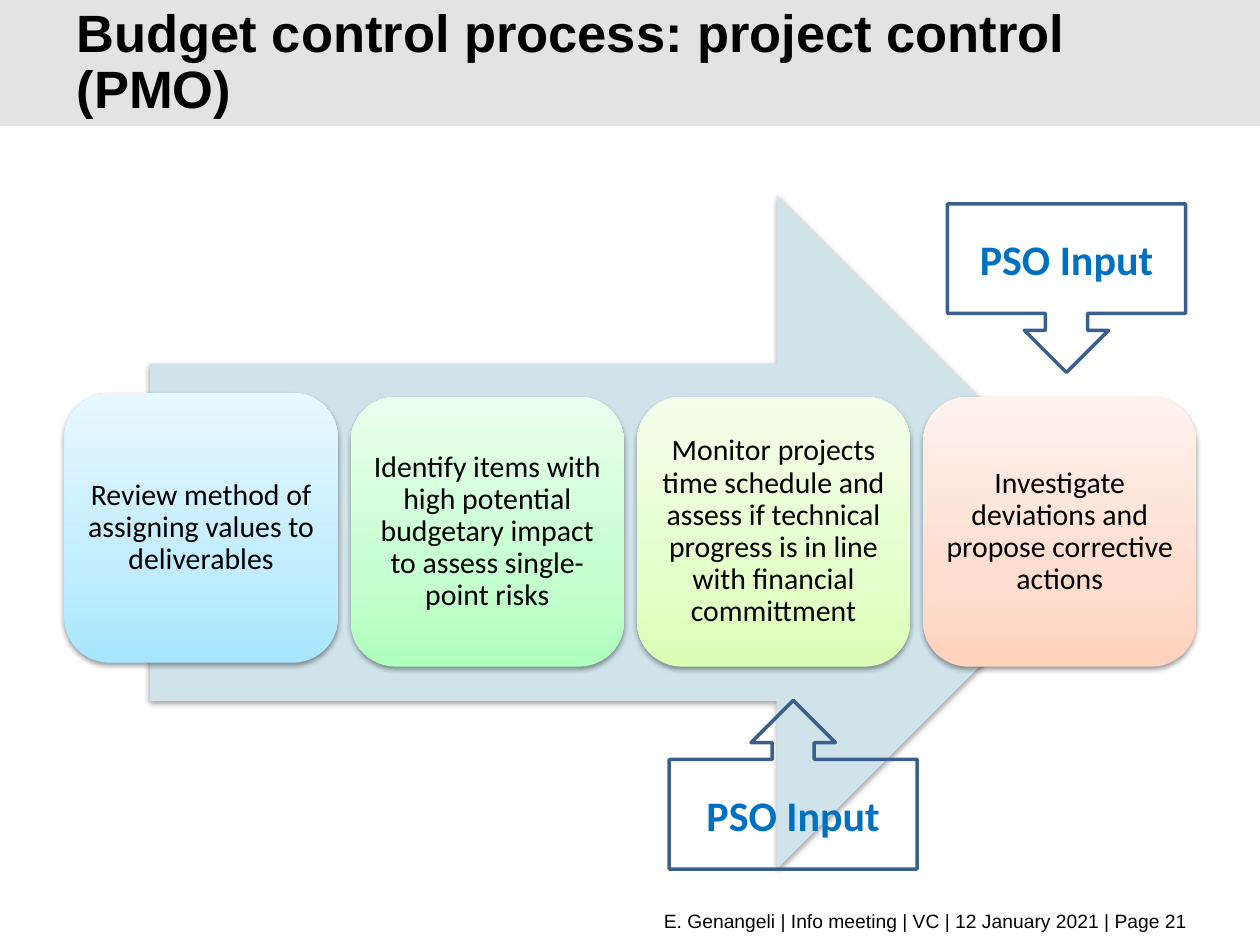
from copy import deepcopy

from lxml.etree import SubElement
from pptx import Presentation
from pptx.dml.color import RGBColor
from pptx.enum.shapes import MSO_SHAPE
from pptx.enum.text import MSO_ANCHOR, PP_ALIGN
from pptx.oxml.ns import qn
from pptx.util import Cm, Pt


def color(value):
    return RGBColor.from_string(value)


def add_item(kind, left, top, width, height, fill=None, line=None, shadow=False):
    """Add a shape with an optional solid or three-stop gradient fill."""
    shape = page.shapes.add_shape(kind, Cm(left), Cm(top), Cm(width), Cm(height))
    shape.shadow.inherit = False
    properties = shape._element.spPr
    if fill is None:
        shape.fill.background()
    elif isinstance(fill, str):
        shape.fill.solid()
        shape.fill.fore_color.rgb = color(fill)
    else:
        shape.fill.gradient()
        shape.fill.gradient_angle = 90
        stop_list = properties.find(qn("a:gradFill")).find(qn("a:gsLst"))
        stop_list.append(deepcopy(stop_list[0]))
        for stop, position, value in zip(shape.fill.gradient_stops, (0, 0.35, 1), fill):
            stop.position = position
            stop.color.rgb = color(value)
    if line:
        shape.line.color.rgb = color(line)
        shape.line.width = Pt(2)
    else:
        shape.line.fill.background()
    if shadow:
        outer = SubElement(properties.find(qn("a:effectLst")), qn("a:outerShdw"),
                           blurRad=str(Pt(3.1)), dist=str(Pt(1.6)), dir="5400000", rotWithShape="0")
        black = SubElement(outer, qn("a:srgbClr"), val="000000")
        SubElement(black, qn("a:alpha"), val="38000")
    return shape


def write(shape, text, font, size, align, value="000000", bold=False):
    """Write one paragraph, centred vertically, and return it."""
    frame = shape.text_frame
    frame.word_wrap = True
    frame.vertical_anchor = MSO_ANCHOR.MIDDLE
    para = frame.paragraphs[0]
    para.alignment = align
    span = para.add_run()
    span.text = text
    span.font.name = font
    span.font.size = Pt(size)
    span.font.bold = bold
    span.font.color.rgb = color(value)
    return para


deck = Presentation()
deck.slide_width, deck.slide_height = Cm(25.4), Cm(19.05)
page = deck.slides.add_slide(deck.slide_layouts[6])

# Title band
add_item(MSO_SHAPE.RECTANGLE, 0, 0, 25.4, 2.54, fill="E3E3E3")
title = page.shapes.add_textbox(Cm(1.3), Cm(0.64), Cm(20.96), Cm(1.27))
para = write(title, "Budget control process: project control (PMO)", "Arial", 30, PP_ALIGN.LEFT, bold=True)
para.line_spacing = Pt(32)

# Process arrow
add_item(MSO_SHAPE.RIGHT_ARROW, 3.02, 3.94, 19.43, 13.59, fill="D0E3EA", shadow=True)

# Process steps
steps = [
    ("Review method of assigning values to deliverables", 7.92, ("A7E6FF", "C1EDFF", "E7F8FF")),
    ("Identify items with high potential budgetary impact to assess single-point risks", 8,
     ("AFFFBD", "C6FFD0", "E9FFED")),
    ("Monitor projects time schedule and assess if technical progress is in line with financial committment", 8,
     ("DBFFB6", "E5FFCB", "F5FFEB")),
    ("Investigate deviations and propose corrective actions", 8, ("FFD2BD", "FFDED0", "FFF2ED")),
]
for index, (text, top, shades) in enumerate(steps):
    box = add_item(MSO_SHAPE.ROUNDED_RECTANGLE, 1.3 + index * 5.77, top, 5.51, 5.44, fill=shades, shadow=True)
    frame = box.text_frame
    frame.margin_left = frame.margin_right = frame.margin_top = frame.margin_bottom = Cm(0.18)
    write(box, text, "Calibri", 17, PP_ALIGN.CENTER).line_spacing = 0.9

# Footer
footer = page.shapes.add_textbox(Cm(1.3), Cm(18.19), Cm(22.89), Cm(0.74))
write(footer, "E. Genangeli | Info meeting | VC | 12 January 2021 | Page 21", "Arial", 11, PP_ALIGN.RIGHT)

# Input callouts
callouts = [
    (MSO_SHAPE.UP_ARROW_CALLOUT, 13.49, 14.12, 5.0),
    (MSO_SHAPE.DOWN_ARROW_CALLOUT, 19.1, 4.11, 4.8),
]
for kind, left, top, width in callouts:
    callout = add_item(kind, left, top, width, 3.4, line="3A5F8C")
    write(callout, "PSO Input", "Calibri", 24, PP_ALIGN.CENTER, "0070C0", bold=True)

deck.save("out.pptx")
